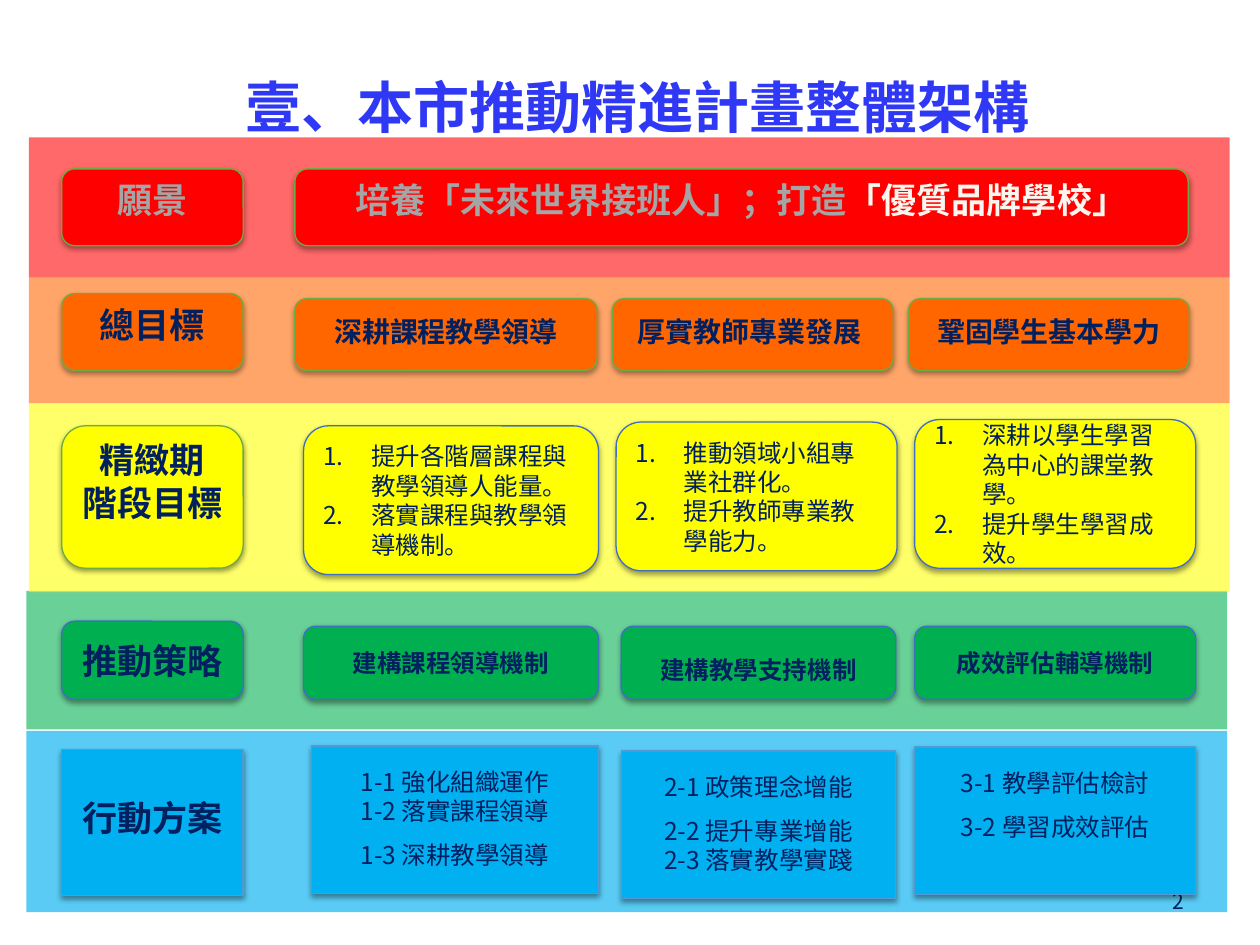
import pptx
import pptx.util
import pptx.oxml
import pptx.oxml.ns
import pptx.dml.color
import pptx.enum.shapes
import pptx.enum.text

Inches = pptx.util.Inches
Pt = pptx.util.Pt
SHAPES = pptx.enum.shapes.MSO_SHAPE
ALIGN = pptx.enum.text.PP_ALIGN
ANCHOR = pptx.enum.text.MSO_ANCHOR

COLORS = {
    "title": "2F38F5", "navy": "002060", "gray": "A5A5A5", "cream": "F8F7EF",
    "red": "FF0000", "orange": "FF6600", "yellow": "FFFF00",
    "green": "00B050", "blue": "00B0F0",
    "green_line": "6DAC43", "indigo_line": "3F6FC3", "sky_line": "5698D3",
}
FONT = "Noto Sans CJK SC"
LABEL_LEFT, LABEL_WIDTH = 0.49, 1.44
PROCESS, ROUNDED, RECTANGLE = (
    SHAPES.FLOWCHART_ALTERNATE_PROCESS, SHAPES.ROUNDED_RECTANGLE, SHAPES.RECTANGLE)


def rgb(name):
    return pptx.dml.color.RGBColor.from_string(COLORS[name])


def add_xml(parent, xml):
    element = pptx.oxml.parse_xml(
        xml.replace("/>", f" {pptx.oxml.ns.nsdecls('a')}/>", 1) if xml.count("<") == 1
        else xml.replace(">", f" {pptx.oxml.ns.nsdecls('a')}>", 1))
    parent.append(element)


def add_run(paragraph, text, size, color="navy", bold=False, font=FONT):
    run = paragraph.add_run()
    run.text = text
    run.font.size = Pt(size)
    run.font.bold = bold
    run.font.color.rgb = rgb(color)
    run.font.name = font
    add_xml(run.font._element, f'<a:ea typeface="{FONT}"/>')


def write(shape, paragraphs, size, bold=False, color="navy", font=FONT, anchor=ANCHOR.MIDDLE,
          align=ALIGN.CENTER, spacings=(), numbered=False):
    """Each paragraph is a string or a list of (text, color) runs."""
    frame = shape.text_frame
    frame.word_wrap = True
    frame.vertical_anchor = anchor
    for index, content in enumerate(paragraphs):
        paragraph = frame.paragraphs[0] if index == 0 else frame.add_paragraph()
        if numbered:
            properties = paragraph._p.get_or_add_pPr()
            properties.set("marL", str(Inches(0.38)))
            properties.set("indent", str(-Inches(0.38)))
            add_xml(properties, '<a:buAutoNum type="arabicPeriod"/>')
        paragraph.alignment = align
        if spacings:
            paragraph.line_spacing = spacings[index]
        runs = [(content, color)] if isinstance(content, str) else content
        for text, run_color in runs:
            add_run(paragraph, text, size, run_color, bold, font)


def add_band(slide, box, color, opacity):
    band = slide.shapes.add_shape(RECTANGLE, *map(Inches, box))
    band.shadow.inherit = False
    band.line.fill.background()
    band.fill.solid()
    band.fill.fore_color.rgb = rgb(color)
    color_element = band._element.spPr.find(".//" + pptx.oxml.ns.qn("a:srgbClr"))
    add_xml(color_element, f'<a:alpha val="{opacity * 1000}"/>')


def add_card(slide, box, kind, fill, line, paragraphs, size, shadow=(1.6, 38), **text_style):
    card = slide.shapes.add_shape(kind, *map(Inches, box))
    card.fill.solid()
    card.fill.fore_color.rgb = rgb(fill)
    card.line.color.rgb = rgb(line)
    card.line.width = Pt(0.75)
    distance, opacity = shadow
    add_xml(card._element.spPr, (
        f'<a:effectLst><a:outerShdw blurRad="{Pt(3.1)}" dist="{Pt(distance)}" dir="5400000" '
        f'rotWithShape="0"><a:srgbClr val="000000"><a:alpha val="{opacity * 1000}"/>'
        '</a:srgbClr></a:outerShdw></a:effectLst>'))
    write(card, paragraphs, size, **text_style)
    return card


def add_label(slide, top, height, kind, fill, line, paragraphs, **style):
    box = (LABEL_LEFT, top, LABEL_WIDTH, height)
    return add_card(slide, box, kind, fill, line, paragraphs, 20, bold=True, **style)


def add_title(slide, box):
    title = slide.shapes.title
    title.left, title.top, title.width, title.height = map(Inches, box)
    write(title, ["壹、本市推動精進計畫整體架構"], 32, bold=True, color="title")


def add_page_number(slide, box):
    number = slide.shapes.add_textbox(*map(Inches, box))
    write(number, ["2"], 12, align=ALIGN.RIGHT)


def add_vision_row(slide, top):
    style = {"shadow": (1.8, 35), "anchor": ANCHOR.TOP}
    add_label(slide, top, 0.61, PROCESS, "red", "green_line", ["願景"], color="gray", **style)
    vision = [("培養「未來世界接班人」；打造", "gray"), ("「優質品牌學校」", "cream")]
    add_card(slide, (2.34, top, 7.09, 0.61), PROCESS, "red", "green_line",
             [vision], 20, bold=True, **style)


def add_goal_row(slide, top):
    shadow = (1.8, 35)
    add_label(slide, top - 0.04, 0.61, PROCESS, "orange", "green_line", ["總目標"],
              shadow=shadow, anchor=ANCHOR.TOP)
    goals = [(2.34, 2.4, "深耕課程教學領導"), (4.86, 2.23, "厚實教師專業發展 "),
             (7.21, 2.23, "鞏固學生基本學力")]
    for left, width, text in goals:
        add_card(slide, (left, top, width, 0.57), PROCESS, "orange", "green_line", [text], 16,
                 shadow=shadow, bold=True, font="Times New Roman", spacings=[Pt(16)])


def add_stage_row(slide, top):
    add_label(slide, top, 1.13, PROCESS, "yellow", "green_line", ["精緻期", "階段目標"],
              anchor=ANCHOR.TOP)
    stages = [
        (2.41, 0, 2.34, ["提升各階層課程與教學領導人能量。", "落實課程與教學領導機制。"]),
        (4.89, -0.03, 2.23, ["推動領域小組專業社群化。", "提升教師專業教學能力。"]),
        (7.26, -0.05, 2.23, ["深耕以學生學習為中心的課堂教學。", "提升學生學習成效。"]),
    ]
    for left, shift, width, items in stages:
        add_card(slide, (left, top + shift, width, 1.18), ROUNDED, "yellow", "indigo_line",
                 items, 14, align=ALIGN.LEFT, numbered=True)


def add_strategy_row(slide, top):
    add_label(slide, top - 0.04, 0.62, ROUNDED, "green", "indigo_line", ["推動策略"])
    strategies = [(2.41, 2.34, "建構課程領導機制", 1.0), (4.93, 2.18, "建構教學支持機制", 1.5),
                  (7.26, 2.23, "成效評估輔導機制", 1.0)]
    for left, width, text, spacing in strategies:
        add_card(slide, (left, top, width, 0.58), ROUNDED, "green", "indigo_line", [text], 14,
                 bold=True, spacings=[spacing])


def add_action_row(slide, top):
    label = add_label(slide, top + 0.03, 1.16, RECTANGLE, "blue", "sky_line", ["行動方案"])
    label.text_frame.margin_bottom = Inches(0.13)
    actions = [
        (2.47, 0, 2.28, ["1-1 強化組織運作", "1-2 落實課程領導", "1-3 深耕教學領導"], [1.5, 1.0, 1.5]),
        (4.93, 0.04, 2.18, ["2-1 政策理念增能", "2-2 提升專業增能", "2-3 落實教學實踐"], [1.5, 1.5, 1.0]),
        (7.26, 0.01, 2.23, ["3-1 教學評估檢討", "3-2 學習成效評估"], [1.5, 1.5]),
    ]
    for left, shift, width, items, spacings in actions:
        add_card(slide, (left, top + shift, width, 1.17), RECTANGLE, "blue", "sky_line",
                 items, 14, anchor=ANCHOR.TOP, spacings=spacings)


def main():
    presentation = pptx.Presentation()
    presentation.slide_width, presentation.slide_height = Inches(10), Inches(7.5)
    slide = presentation.slides.add_slide(presentation.slide_layouts[5])

    # Background bands, bottom to top
    bands = [(0.21, 5.8, 1.44, "blue", 65), (0.21, 4.69, 1.1, "green", 59),
             (0.23, 3.2, 1.5, "yellow", 59), (0.23, 2.2, 1.0, "orange", 59),
             (0.23, 1.09, 1.11, "red", 59)]
    for left, top, height, color, opacity in bands:
        add_band(slide, (left, top, 9.53, height), color, opacity)

    # Title and page number
    add_title(slide, (0.56, 0.22, 9, 1.25))
    add_page_number(slide, (7.17, 6.95, 2.33, 0.4))

    # Framework rows
    add_vision_row(slide, 1.34)
    add_goal_row(slide, 2.37)
    add_stage_row(slide, 3.38)
    add_strategy_row(slide, 4.97)
    add_action_row(slide, 5.92)
    presentation.save("out.pptx")


if __name__ == "__main__":
    main()
